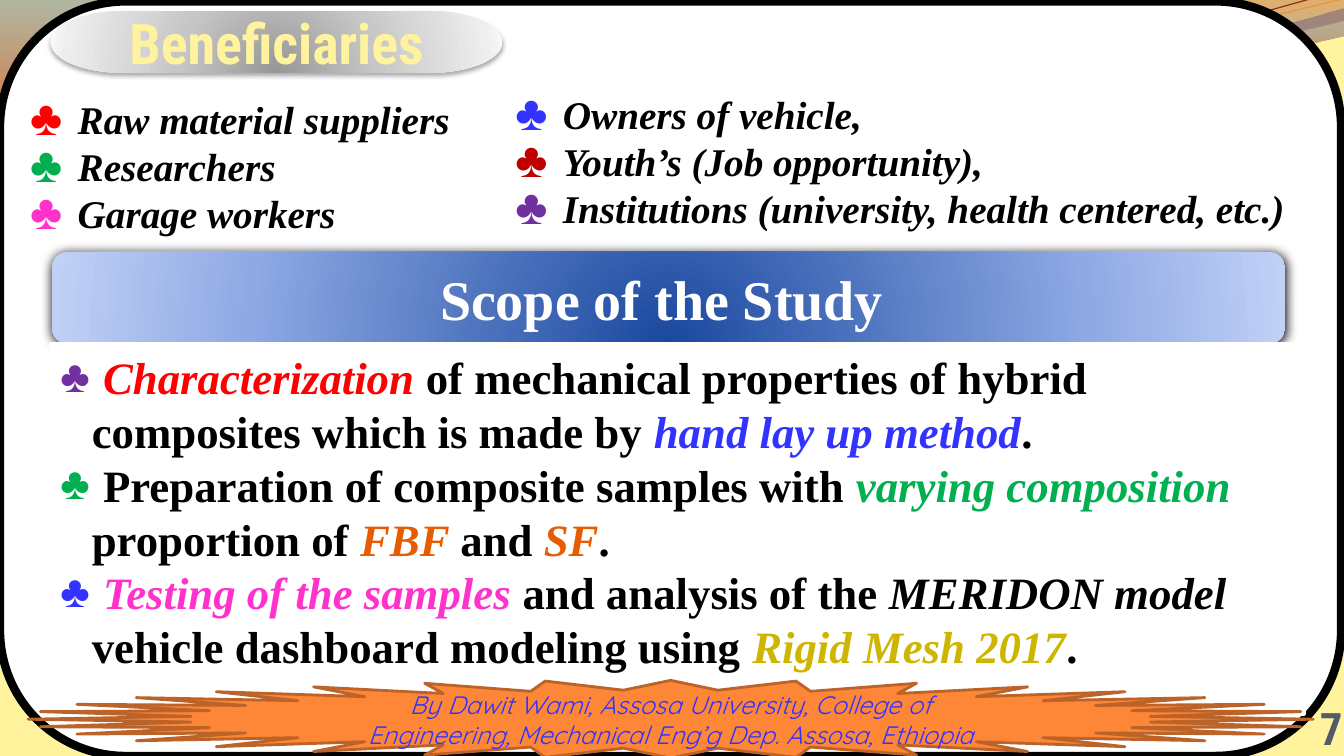
from lxml import etree
from pptx import Presentation
from pptx.dml import color
from pptx.enum import shapes, text
from pptx.oxml import ns
from pptx.util import Pt

SERIF = "Times New Roman"
HEADING = "Roboto Condensed"
BLACK, WHITE, RED, GREEN, BLUE = "000000", "FFFFFF", "FF0000", "00B050", "3333FF"
PINK, PURPLE, ORANGE, GOLD, CREAM = "FF33CC", "7030A0", "E75C01", "CEB500", "FFF39D"

UPPER_WAVE = [(0, 0), (423, 0), (456, 12, 637, 45, 728, 45), (819, 45, 920, 19, 960, 6),
              (960, 26), (944, 32, 835, 55, 716, 54), (597, 54, 366, 20, 247, 24),
              (123, 26, 44, 60, 0, 81)]
RIGHT_WAVE = [(460, 0), (489, 8, 654, 45, 738, 47), (822, 50, 923, 23, 960, 15), (960, 0)]
DARK_CURVE = [(0, 86), (46, 73, 152, 45, 266, 40), (379, 35, 569, 63, 684, 55),
              (799, 48, 901, 6, 958, -7)]
LIGHT_CURVE = [(0, 81), (45, 74, 157, 48, 272, 42), (387, 38, 573, 59, 688, 52),
               (803, 45, 904, 10, 960, -1)]

SUPPLY_SIDE = [(RED, [("Raw material suppliers", BLACK, True)]),
               (GREEN, [("Researchers", BLACK, True)]),
               (PINK, [("Garage workers", BLACK, True)])]
USER_SIDE = [(BLUE, [("Owners of vehicle,", BLACK, True)]),
             ("C00000", [("Youth’s (Job opportunity),", BLACK, True)]),
             (PURPLE, [("Institutions (university, health centered, etc.)", BLACK, True)])]
SCOPE = [
    (PURPLE, [("Characterization ", RED, True),
              ("of mechanical properties of hybrid composites which is made by ", BLACK, False),
              ("hand lay up method", BLUE, True), (".", BLACK, False)]),
    (GREEN, [("Preparation of composite samples with ", BLACK, False),
             ("varying composition ", GREEN, True), ("proportion of ", BLACK, False),
             ("FBF ", ORANGE, True), ("and ", BLACK, False),
             ("SF", ORANGE, True), (".", BLACK, False)]),
    (BLUE, [("Testing of the samples ", PINK, True), ("and analysis of the ", BLACK, False),
            ("MERIDON model ", BLACK, True),
            ("vehicle dashboard modeling using ", BLACK, False),
            ("Rigid Mesh 2017", GOLD, True), (".", BLACK, False)]),
]


def rgb(value):
    return color.RGBColor.from_string(value)


def add_node(parent, tag, **attributes):
    node = etree.SubElement(parent, ns.qn(tag))
    for name, value in attributes.items():
        node.set(name, str(value))
    return node


def set_outline(shape, line_color, width):
    if line_color:
        shape.line.color.rgb = rgb(line_color)
        shape.line.width = Pt(width)
    else:
        shape.line.fill.background()


def set_gradient(shape, stops, radial=False):
    shape.fill.gradient()
    gradient = shape._element.spPr.find(ns.qn("a:gradFill"))
    for child in list(gradient):
        gradient.remove(child)
    stop_list = add_node(gradient, "a:gsLst")
    for position, value, opacity in stops:
        stop = add_node(stop_list, "a:gs", pos=position * 1000)
        add_node(add_node(stop, "a:srgbClr", val=value), "a:alpha", val=opacity * 1000)
    if radial:
        circle = add_node(gradient, "a:path", path="circle")
        add_node(circle, "a:fillToRect", l=50000, t=130000, r=50000, b=-30000)
    else:
        add_node(gradient, "a:lin", ang=5400000, scaled=0)


def set_shadow(shape, opacity, blur, distance):
    effects = shape._element.spPr.find(ns.qn("a:effectLst"))
    shadow = add_node(effects, "a:outerShdw", blurRad=Pt(blur), dist=Pt(distance),
                      dir=5400000, algn="t", rotWithShape=0)
    add_node(add_node(shadow, "a:srgbClr", val=BLACK), "a:alpha", val=opacity * 1000)


def curve_points(segments, steps=3):
    points = [segments[0]]
    for segment in segments[1:]:
        if len(segment) == 2:
            points.append(segment)
            continue
        start, controls = points[-1], (segment[:2], segment[2:4], segment[4:])
        for step in range(1, steps + 1):
            t = step / steps
            weights = (1 - t) ** 3, 3 * t * (1 - t) ** 2, 3 * t * t * (1 - t), t ** 3
            points.append(tuple(sum(weight * point[axis] for weight, point
                                    in zip(weights, (start, *controls)))
                                for axis in (0, 1)))
    return points


def add_wave(slide, segments, stops=None, line_color=None, width=0):
    points = curve_points(segments)
    builder = slide.shapes.build_freeform(*points[0], scale=Pt(1))
    builder.add_line_segments(points[1:], close=bool(stops))
    wave = builder.convert_to_shape()
    wave.shadow.inherit = False
    if stops:
        set_gradient(wave, stops)
    else:
        wave.fill.background()
    set_outline(wave, line_color, width)


def add_panel(slide, kind, box, fill=WHITE, line_color=None, width=0):
    panel = slide.shapes.add_shape(kind, *map(Pt, box))
    panel.shadow.inherit = False
    panel.fill.solid()
    panel.fill.fore_color.rgb = rgb(fill)
    set_outline(panel, line_color, width)
    return panel


def write_label(shape, wording, size, font_name, font_color, bold=True, italic=False,
                align=text.PP_ALIGN.CENTER, anchor=text.MSO_ANCHOR.MIDDLE):
    frame = shape.text_frame
    frame.word_wrap = True
    frame.auto_size = text.MSO_AUTO_SIZE.NONE
    frame.vertical_anchor = anchor
    paragraph = frame.paragraphs[0]
    paragraph.text = wording
    paragraph.alignment = align
    font = paragraph.font
    font.size, font.name, font.bold, font.italic = Pt(size), font_name, bold, italic
    font.color.rgb = rgb(font_color)


def add_bullet(paragraph, bullet_color, indent, percent):
    properties = paragraph._p.get_or_add_pPr()
    properties.set("marL", str(Pt(indent)))
    properties.set("indent", str(-Pt(indent)))
    add_node(add_node(properties, "a:buClr"), "a:srgbClr", val=bullet_color)
    add_node(properties, "a:buSzPct", val=percent * 1000)
    add_node(properties, "a:buFont", typeface=SERIF)
    add_node(properties, "a:buChar", char="♣")


def add_club_list(slide, box, items, size, indent, percent=100, bottom=3.6):
    panel = add_panel(slide, shapes.MSO_SHAPE.RECTANGLE, box, WHITE, WHITE, 2)
    frame = panel.text_frame
    frame.word_wrap = True
    frame.vertical_anchor = text.MSO_ANCHOR.MIDDLE
    frame.margin_bottom = Pt(bottom)
    for index, (bullet_color, runs) in enumerate(items):
        paragraph = frame.add_paragraph() if index else frame.paragraphs[0]
        paragraph.alignment = text.PP_ALIGN.LEFT
        add_bullet(paragraph, bullet_color, indent, percent)
        font = paragraph.font
        font.size, font.name, font.bold = Pt(size), SERIF, True
        for wording, run_color, italic in [(" ", bullet_color, False), *runs]:
            run = paragraph.add_run()
            run.text = wording
            run.font.italic = italic
            run.font.color.rgb = rgb(run_color)


def main():
    """Build the beneficiaries and scope slide."""
    presentation = Presentation()
    presentation.slide_width, presentation.slide_height = Pt(960), Pt(540)
    slide = presentation.slides.add_slide(presentation.slide_layouts[5])
    slide.background.fill.solid()
    slide.background.fill.fore_color.rgb = rgb(CREAM)
    preset = shapes.MSO_SHAPE

    add_wave(slide, UPPER_WAVE, [(0, "4F6EA8", 45), (100, "B61A00", 55)])
    add_wave(slide, RIGHT_WAVE, [(0, "951500", 30), (80, "5681D1", 45)])
    add_wave(slide, DARK_CURVE, line_color="9E2713", width=0.85)
    add_wave(slide, LIGHT_CURVE, line_color="FE8637", width=0.75)

    number = slide.shapes.add_textbox(*map(Pt, (929, 503, 30, 36)))
    frame = number.text_frame
    frame.margin_left = frame.margin_right = frame.margin_top = frame.margin_bottom = 0
    write_label(number, "7", 32, HEADING, "535B68", align=text.PP_ALIGN.RIGHT,
                anchor=text.MSO_ANCHOR.BOTTOM)

    add_panel(slide, preset.ROUNDED_RECTANGLE, (0, 1, 958, 539), WHITE, BLACK, 6)

    title_box = (36, 8, 323, 44)
    plaque = add_panel(slide, preset.FLOWCHART_TERMINATOR, title_box)
    set_gradient(plaque, [(0, "979797", 100), (43, "C6C6C6", 100), (93, "EEEEEE", 100),
                          (100, "F9F9F9", 100)], radial=True)
    set_shadow(plaque, 32, 3.5, 2.2)
    title = slide.shapes.title
    title.left, title.top, title.width, title.height = map(Pt, title_box)
    write_label(title, "Beneficiaries", 40, HEADING, CREAM)
    slide.shapes._spTree.append(title._element)

    add_club_list(slide, (14.4, 59.8, 345, 117.4), SUPPLY_SIDE, 28, 27, 125)

    banner = add_panel(slide, preset.FLOWCHART_ALTERNATE_PROCESS, (37, 180, 881, 65.5))
    set_gradient(banner, [(0, "1B499F", 100), (68, "8EA9E4", 100), (100, "C1D0F6", 100)],
                 radial=True)
    set_shadow(banner, 100, 8.5, 1)
    banner.text_frame.margin_right = Pt(17)
    write_label(banner, "Scope of the Study", 40, SERIF, WHITE)

    add_club_list(slide, (36, 245.5, 896, 265), SCOPE, 32, 22.5, bottom=29)
    add_club_list(slide, (361, 61.2, 587, 108), USER_SIDE, 28, 27, 125)

    burst = add_panel(slide, preset.STAR_32_POINT, (20, 486, 918, 55.5),
                      "FE8637", "BC6329", 2)
    write_label(burst, "By Dawit Wami, Assosa University, College of Engineering, "
                "Mechanical Eng’g Dep. Assosa, Ethiopia", 18, "Quicksand", BLUE,
                bold=False, italic=True)
    presentation.save("out.pptx")


if __name__ == "__main__":
    main()
